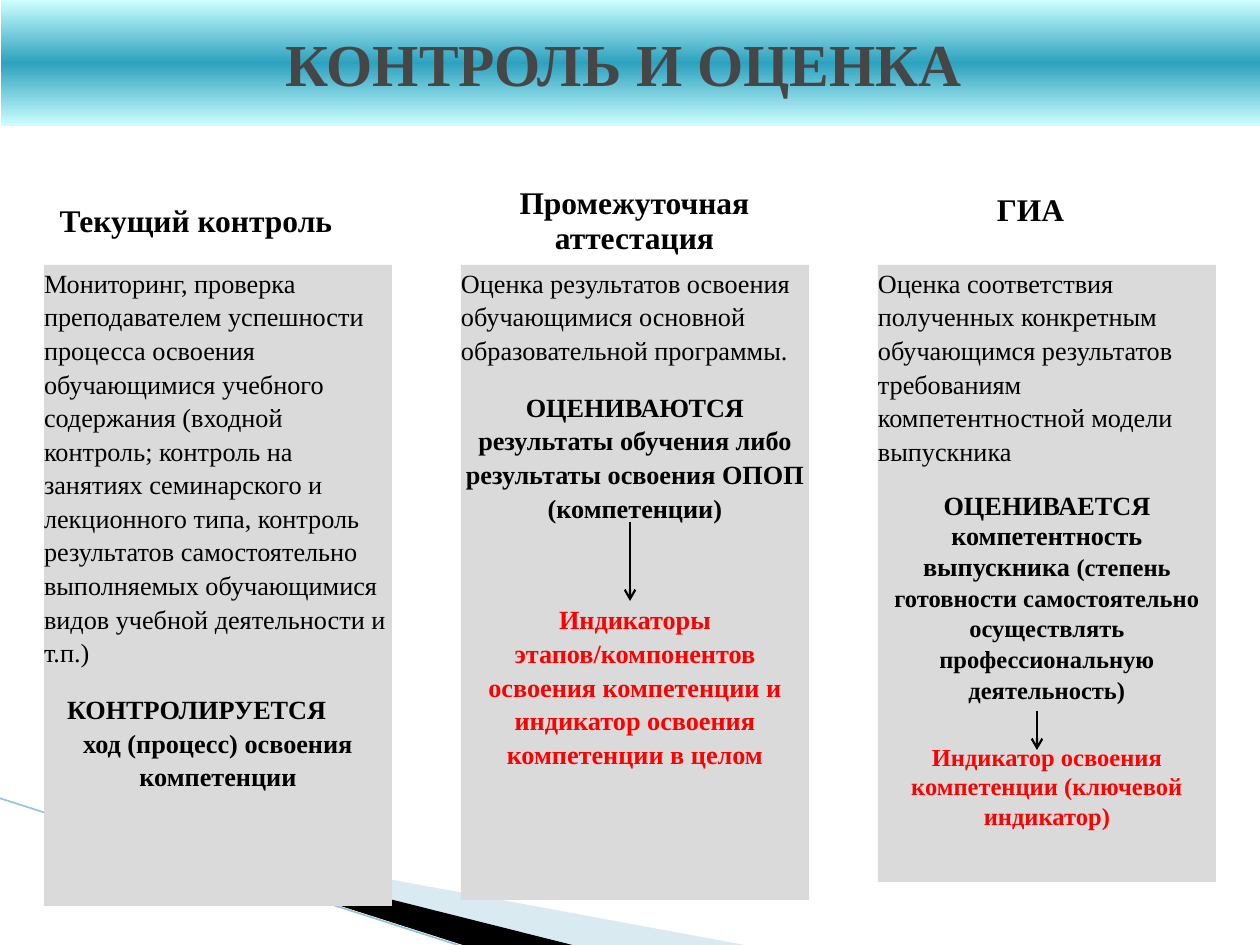
from copy import deepcopy

from lxml import etree
from pptx import Presentation
from pptx.dml.color import RGBColor
from pptx.enum.shapes import MSO_CONNECTOR, MSO_SHAPE
from pptx.enum.text import MSO_ANCHOR, PP_ALIGN
from pptx.oxml.ns import qn
from pptx.util import Emu, Pt

LEFT, CENTER = PP_ALIGN.LEFT, PP_ALIGN.CENTER
TOP, MIDDLE = MSO_ANCHOR.TOP, MSO_ANCHOR.MIDDLE
RECTANGLE = MSO_SHAPE.RECTANGLE
STRAIGHT = MSO_CONNECTOR.STRAIGHT
FONT = "Times New Roman"
PX_PER_INCH = 126
COLORS = {
    "text": "000000", "accent": "FF0000", "title": "464646", "panel": "DADADA",
    "band_edge": "CDFFFF", "band_middle": "2DA2BF",
    "swoosh": "A0CBDC", "swoosh_line": "97C5D8",
}
PANEL_TOP = 265


def px(length):
    return Emu(round(length * 914400 / PX_PER_INCH))


def rgb(name):
    return RGBColor.from_string(COLORS[name])


def item(*runs, align=CENTER, spacing=19.2, after=0, indent=0):
    return {"runs": runs, "align": align, "spacing": spacing,
            "after": after, "indent": indent}


def run_of(text, size=15, bold=True, color="text"):
    return text, size, bold, color


def body(text, after=0):
    return item(run_of(text, bold=False), align=LEFT, after=after)


def heading_line(text):
    return item(run_of(text, 18), spacing=19.9)


def fill_text(shape, items, anchor=TOP, wrap=True):
    frame = shape.text_frame
    frame.word_wrap = wrap
    frame.vertical_anchor = anchor
    frame.margin_left = frame.margin_right = 0
    frame.margin_top = frame.margin_bottom = 0
    for index, entry in enumerate(items):
        paragraph = frame.add_paragraph() if index else frame.paragraphs[0]
        paragraph.alignment = entry["align"]
        if entry["spacing"]:
            paragraph.line_spacing = Pt(entry["spacing"])
        paragraph.space_after = Pt(entry["after"])
        if entry["indent"]:
            paragraph._p.get_or_add_pPr().set("marL", str(px(entry["indent"])))
        for text, size, bold, color in entry["runs"]:
            run = paragraph.add_run()
            run.text = text
            run.font.name = FONT
            run.font.size = Pt(size)
            run.font.bold = bold
            run.font.color.rgb = rgb(color)


def add_rectangle(slide, left, top, width, height):
    shape = slide.shapes.add_shape(RECTANGLE, px(left), px(top), px(width), px(height))
    shape.shadow.inherit = False
    shape.line.fill.background()
    return shape


def add_panel(slide, left, width, height, items):
    shape = add_rectangle(slide, left, PANEL_TOP, width, height)
    shape.fill.solid()
    shape.fill.fore_color.rgb = rgb("panel")
    fill_text(shape, items)


def add_heading(slide, left, top, width, height, lines, wrap=True):
    box = slide.shapes.add_textbox(px(left), px(top), px(width), px(height))
    fill_text(box, [heading_line(line) for line in lines], wrap=wrap)


def add_title_band(slide, text):
    shape = add_rectangle(slide, 1, 0, 1260, 126)
    shape.fill.gradient()
    shape.fill.gradient_angle = 270
    stop_list = shape._element.spPr.find(qn("a:gradFill")).find(qn("a:gsLst"))
    stop_list.insert(1, deepcopy(stop_list[0]))
    stops = zip(shape.fill.gradient_stops, (0, 0.5, 1),
                ("band_edge", "band_middle", "band_edge"))
    for stop, position, color in stops:
        stop.position = position
        stop.color.rgb = rgb(color)
    fill_text(shape, [item(run_of(text, 34, color="title"), spacing=None)], MIDDLE)


def add_polygon(slide, points, color, opacity=None):
    start, *rest = [(px(x), px(y)) for x, y in points]
    builder = slide.shapes.build_freeform(*start)
    builder.add_line_segments(rest, close=True)
    shape = builder.convert_to_shape()
    shape.shadow.inherit = False
    shape.line.fill.background()
    shape.fill.solid()
    shape.fill.fore_color.rgb = rgb(color)
    if opacity is not None:
        color_element = next(shape._element.spPr.iter(qn("a:srgbClr")))
        etree.SubElement(color_element, qn("a:alpha")).set("val", str(opacity * 1000))


def add_line(slide, start, end, color, width, arrow=False):
    line = slide.shapes.add_connector(STRAIGHT, *map(px, start + end))
    line.line.color.rgb = rgb(color)
    line.line.width = Pt(width)
    if arrow:
        outline = line.line._get_or_add_ln()
        etree.SubElement(outline, qn("a:tailEnd")).set("type", "arrow")
    etree.SubElement(line._element.spPr, qn("a:effectLst"))


def add_swoosh(slide):
    add_polygon(slide, [(69, 820), (750, 946), (575, 946), (69, 819)], "swoosh", 40)
    add_polygon(slide, [(67, 818), (576, 946), (469, 947), (68, 819)], "text")
    add_line(slide, (-1, 798), (467, 948), "swoosh_line", 0.95)


def main():
    presentation = Presentation()
    presentation.slide_width = px(1260)
    presentation.slide_height = px(945)
    slide = presentation.slides.add_slide(presentation.slide_layouts[6])

    add_swoosh(slide)

    add_heading(slide, 44, 204, 304, 50, ["Текущий контроль"])
    add_panel(slide, 44, 348, 641, [
        body("Мониторинг, проверка преподавателем успешности процесса освоения "
             "обучающимися учебного содержания (входной контроль; контроль на "
             "занятиях семинарского и лекционного типа, контроль результатов "
             "самостоятельно выполняемых обучающимися видов учебной "
             "деятельности и т.п.)", after=13.3),
        item(run_of("КОНТРОЛИРУЕТСЯ"), align=LEFT, indent=23),
        item(run_of("ход (процесс) освоения компетенции")),
    ])

    add_heading(slide, 451, 186, 367, 68, ["Промежуточная", "аттестация"])
    add_heading(slide, 968, 193, 125, 32, ["ГИА"], wrap=False)
    add_panel(slide, 878, 338, 617, [
        body("Оценка соответствия полученных конкретным обучающимся "
             "результатов требованиям"),
        body("компетентностной модели выпускника", after=13.3),
        item(run_of("ОЦЕНИВАЕТСЯ компетентность выпускника "),
             run_of("(степень готовности самостоятельно осуществлять "
                    "профессиональную деятельность)", 14),
             spacing=17.5, after=21.7),
        item(run_of("Индикатор освоения компетенции (ключевой индикатор)",
                    14, color="accent"), spacing=16.8),
    ])

    add_panel(slide, 461, 348, 635, [
        body("Оценка результатов освоения обучающимися основной "
             "образовательной программы.", after=13.3),
        item(run_of("ОЦЕНИВАЮТСЯ результаты обучения либо результаты "
                    "освоения ОПОП (компетенции)"), after=44.7),
        item(run_of("Индикаторы этапов/компонентов освоения компетенции и "
                    "индикатор освоения компетенции в целом", color="accent")),
    ])

    add_line(slide, (630, 522), (630, 601), "text", 1.25, arrow=True)
    add_line(slide, (1037, 711), (1037, 750), "text", 1.25, arrow=True)
    add_title_band(slide, "КОНТРОЛЬ И ОЦЕНКА ")

    presentation.save("out.pptx")


if __name__ == "__main__":
    main()
